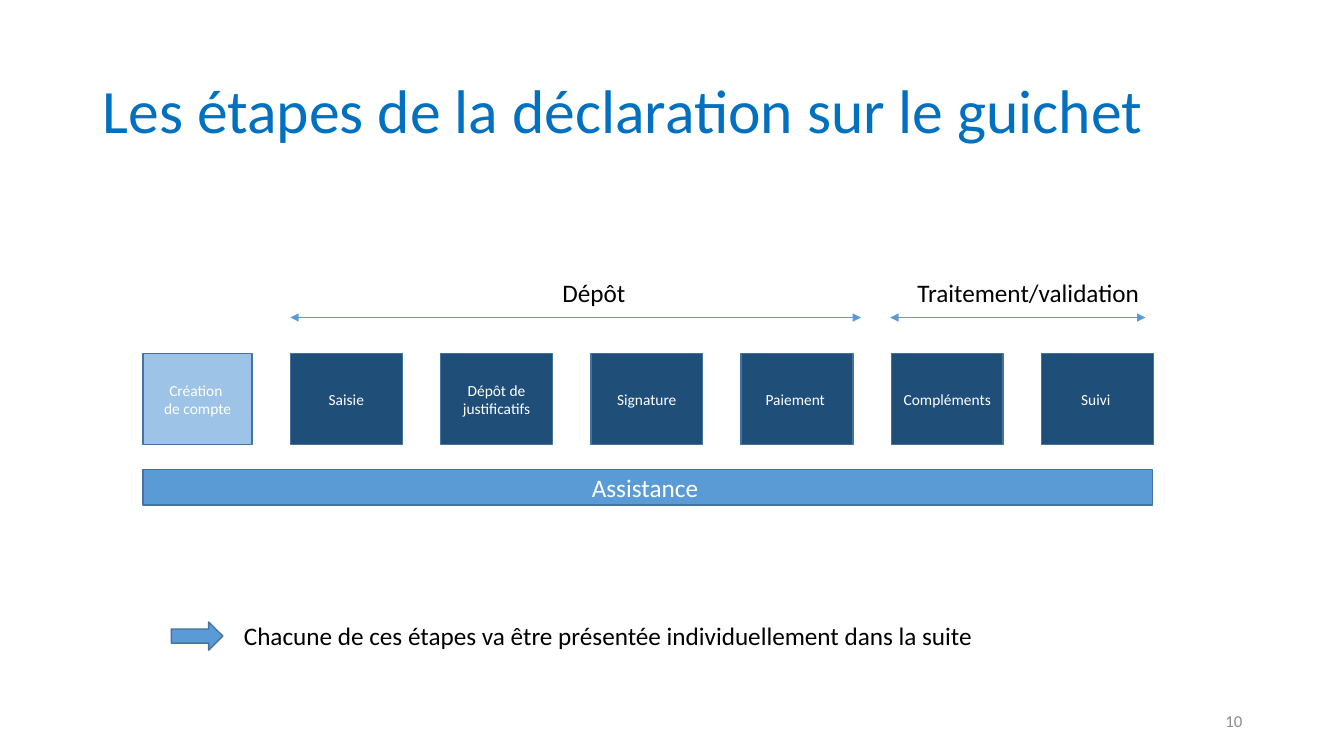
from lxml.etree import SubElement
from pptx import Presentation
from pptx.dml.color import RGBColor
from pptx.enum.shapes import MSO_CONNECTOR, MSO_SHAPE
from pptx.enum.text import MSO_ANCHOR, MSO_AUTO_SIZE, PP_ALIGN
from pptx.oxml.ns import qn
from pptx.util import Inches, Pt

TITLE_BLUE = RGBColor(0x00, 0x70, 0xC0)
LIGHT_BLUE = RGBColor(0x9D, 0xC3, 0xE6)
MID_BLUE = RGBColor(0x5B, 0x9B, 0xD5)
DARK_BLUE = RGBColor(0x1F, 0x4E, 0x79)
OUTLINE = RGBColor(0x43, 0x73, 0x9E)
GREY = RGBColor(0x8C, 0x8C, 0x8C)
WHITE = RGBColor(0xFF, 0xFF, 0xFF)
BLACK = RGBColor(0x00, 0x00, 0x00)

STEPS = ["Saisie", "Dépôt de justificatifs", "Signature", "Paiement ", "Compléments", "Suivi "]
LEFT = 1.42
STEP_LEFT = 2.88
STEP_PITCH = 1.49
STEP_TOP = 3.51
STEP_HEIGHT = 0.9
PHASE_TOP = 3.15
LABEL_TOP = 2.7


class SlideBuilder:
    font_name = "Calibri"

    def __init__(self, page):
        self.page = page

    def fill_text(self, shape, text, size, color, align, **frame_format):
        frame = shape.text_frame
        for name, value in frame_format.items():
            setattr(frame, name, value)
        frame.text = text
        font_format = {"name": self.font_name, "size": Pt(size)}
        for para in frame.paragraphs:
            para.alignment = align
            for span in para.runs:
                for name, value in font_format.items():
                    setattr(span.font, name, value)
                span.font.color.rgb = color

    def text(self, at, text, size=18, color=BLACK, align=PP_ALIGN.LEFT, **frame_format):
        box = self.page.shapes.add_textbox(*map(Inches, at))
        self.fill_text(box, text, size, color, align, **frame_format)
        return box

    def label(self, at, text):
        return self.text(at, text, word_wrap=False, auto_size=MSO_AUTO_SIZE.SHAPE_TO_FIT_TEXT)

    def block(self, at, fill, text="", size=11, kind=MSO_SHAPE.RECTANGLE):
        shape = self.page.shapes.add_shape(kind, *map(Inches, at))
        shape.shadow.inherit = False
        shape.fill.solid()
        shape.fill.fore_color.rgb = fill
        shape.line.color.rgb = OUTLINE
        shape.line.width = Pt(1)
        if text:
            self.fill_text(shape, text, size, WHITE, PP_ALIGN.CENTER,
                           word_wrap=True, vertical_anchor=MSO_ANCHOR.MIDDLE)

    def double_arrow(self, start, end, top):
        arrow = self.page.shapes.add_connector(
            MSO_CONNECTOR.STRAIGHT, *map(Inches, (start, top, end, top)))
        arrow.line.color.rgb = MID_BLUE
        arrow.line.width = Pt(0.5)
        outline = arrow.get_or_add_ln()
        for tag in ("a:headEnd", "a:tailEnd"):
            SubElement(outline, qn(tag), type="triangle")
        SubElement(outline.getparent(), qn("a:effectLst"))


def main():
    deck = Presentation()
    deck.slide_width = Inches(13.33)
    deck.slide_height = Inches(7.5)
    builder = SlideBuilder(deck.slides.add_slide(deck.slide_layouts[6]))

    title = builder.text((0.92, 0.4, 11.5, 1.45), "Les étapes de la déclaration sur le guichet",
                         44, TITLE_BLUE, word_wrap=True, vertical_anchor=MSO_ANCHOR.MIDDLE)
    title.text_frame.paragraphs[0].line_spacing = 0.9
    builder.text((9.42, 6.95, 3, 0.4), "10", 12, GREY, PP_ALIGN.RIGHT,
                 word_wrap=True, vertical_anchor=MSO_ANCHOR.MIDDLE)

    builder.block((LEFT, STEP_TOP, 1.08, STEP_HEIGHT), LIGHT_BLUE, "Création \nde compte")
    for index, step in enumerate(STEPS):
        left = STEP_LEFT + index * STEP_PITCH
        builder.block((left, STEP_TOP, 1.11, STEP_HEIGHT), DARK_BLUE, step)
    builder.block((LEFT, 4.66, 10.01, 0.35), MID_BLUE, "Assistance ", 18)

    builder.double_arrow(STEP_LEFT, 8.54, PHASE_TOP)
    builder.double_arrow(8.83, 11.36, PHASE_TOP)
    builder.label((5.48, LABEL_TOP, 0.83, 0.4), "Dépôt")
    builder.label((9, LABEL_TOP, 2.43, 0.4), "Traitement/validation")

    builder.label((2.32, 6.11, 7.58, 0.4),
                  "Chacune de ces étapes va être présentée individuellement dans la suite")
    builder.block((1.7, 6.17, 0.51, 0.28), MID_BLUE, kind=MSO_SHAPE.RIGHT_ARROW)

    deck.save("out.pptx")


if __name__ == "__main__":
    main()
